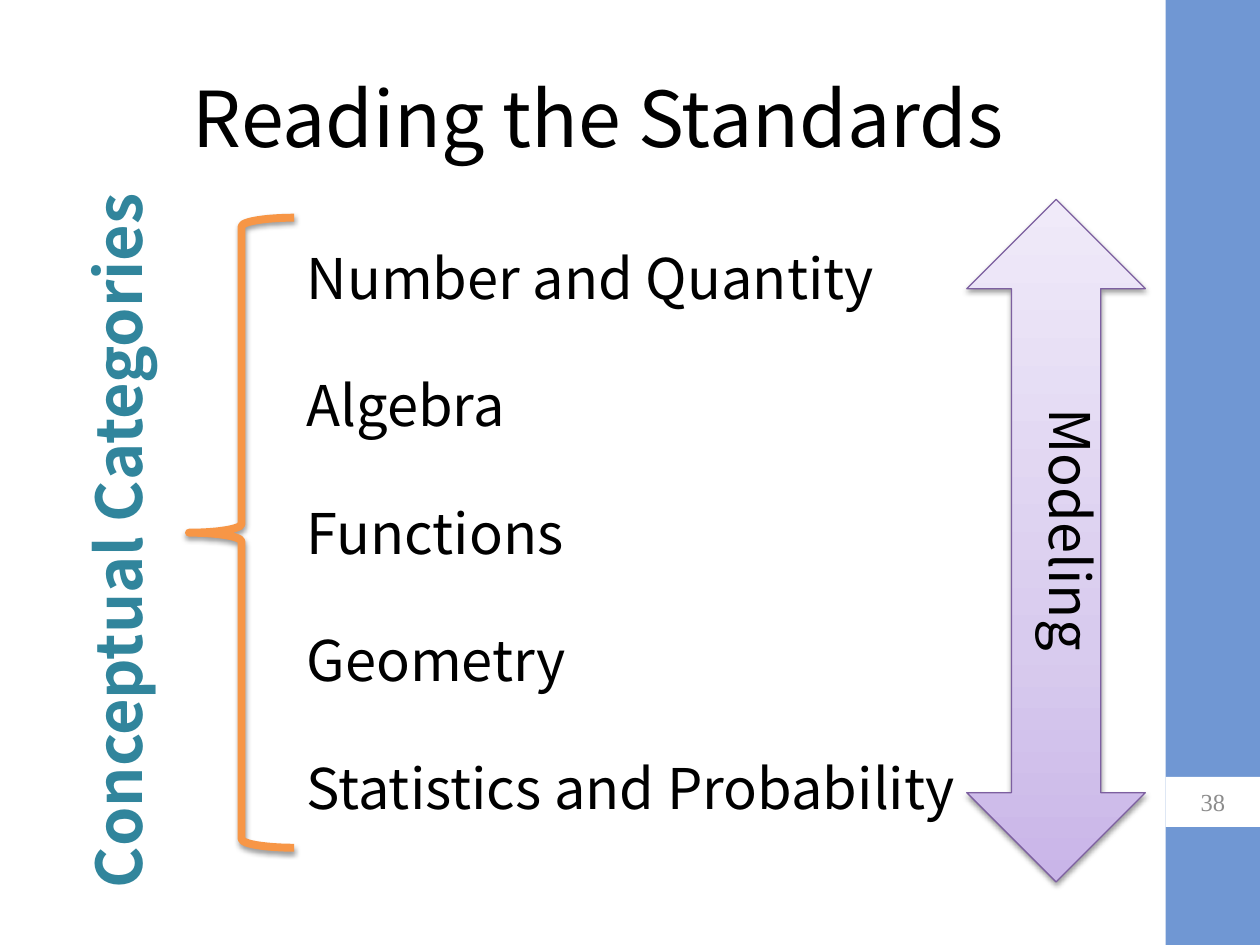
from lxml.etree import SubElement
from pptx import Presentation
from pptx.dml.color import RGBColor
from pptx.enum.shapes import MSO_SHAPE
from pptx.enum.text import MSO_ANCHOR, MSO_AUTO_SIZE, PP_ALIGN
from pptx.oxml.ns import qn
from pptx.util import Cm, Pt

SANS = "Noto Sans CJK TC"
CATEGORIES = ["Number and Quantity", "Algebra", "Functions", "Geometry",
              "Statistics and Probability"]
ARROW_STOPS = [(0, "C9B5E8"), (35, "D8CBEE"), (100, "F0EAF9")]


def color(hex_value):
    return RGBColor.from_string(hex_value)


def apply(target, values):
    for name, value in values.items():
        setattr(target, name, value)


def write(frame, lines, size, hex_value, font=SANS, bold=False, **paragraph_format):
    frame.word_wrap = True
    for index, line in enumerate(lines):
        paragraph = frame.paragraphs[0] if index == 0 else frame.add_paragraph()
        apply(paragraph, paragraph_format)
        run = paragraph.add_run()
        run.text = line
        apply(run.font, {"name": font, "size": Pt(size), "bold": bold})
        run.font.color.rgb = color(hex_value)


def add_text(slide, box, lines, size, hex_value, **text_format):
    frame = slide.shapes.add_textbox(*map(Cm, box)).text_frame
    write(frame, lines, size, hex_value, **text_format)
    return frame


def add_vertical_text(slide, box, line, size, hex_value, direction, bold=False):
    frame = add_text(slide, box, [line], size, hex_value, bold=bold,
                     alignment=PP_ALIGN.CENTER)
    frame.auto_size = MSO_AUTO_SIZE.SHAPE_TO_FIT_TEXT
    frame._txBody.bodyPr.set("vert", direction)


def add_figure(slide, kind, box, fill=None, line=None, line_width=0.75):
    figure = slide.shapes.add_shape(kind, *map(Cm, box))
    figure.shadow.inherit = False
    if fill:
        figure.fill.solid()
        figure.fill.fore_color.rgb = color(fill)
    else:
        figure.fill.background()
    if line:
        figure.line.color.rgb = color(line)
        figure.line.width = Pt(line_width)
    else:
        figure.line.fill.background()
    return figure


def add_color_value(parent, hex_value):
    return SubElement(parent, qn("a:srgbClr"), val=hex_value)


def cast_shadow(figure):
    effects = figure._element.spPr.find(qn("a:effectLst"))
    shadow = SubElement(effects, qn("a:outerShdw"), blurRad=str(Pt(3.1)),
                        dist=str(Pt(1.6)), dir="5400000", rotWithShape="0")
    SubElement(add_color_value(shadow, "000000"), qn("a:alpha"), val="38000")


def fill_gradient(figure, stops, angle):
    figure.fill.gradient()
    figure.fill.gradient_angle = angle
    stop_list = figure._element.spPr.find(qn("a:gradFill")).find(qn("a:gsLst"))
    for old_stop in list(stop_list):
        stop_list.remove(old_stop)
    for position, hex_value in stops:
        stop = SubElement(stop_list, qn("a:gs"), pos=str(position * 1000))
        add_color_value(stop, hex_value)


def main():
    deck = Presentation()
    apply(deck, {"slide_width": Cm(25.4), "slide_height": Cm(19.05)})
    slide = deck.slides.add_slide(deck.slide_layouts[6])

    add_figure(slide, MSO_SHAPE.RECTANGLE, (23.5, 0, 1.9, 19.05), "7097D3")

    title = add_text(slide, (1.27, 0.76, 21.59, 3.18), ["Reading the Standards"],
                     44, "000000", alignment=PP_ALIGN.CENTER)
    title.vertical_anchor = MSO_ANCHOR.MIDDLE

    add_text(slide, (5.93, 4.78, 16.7, 14.27), CATEGORIES, 32, "000000",
             space_after=Pt(34.4))

    page_number = add_figure(slide, MSO_SHAPE.RECTANGLE, (23.5, 15.66, 1.9, 1.01),
                             "FFFFFF").text_frame
    write(page_number, ["38"], 14, "8C8C8C", font="Times New Roman",
          alignment=PP_ALIGN.CENTER)
    page_number.vertical_anchor = MSO_ANCHOR.MIDDLE

    brace = add_figure(slide, MSO_SHAPE.LEFT_BRACE, (3.81, 4.39, 2.12, 12.7),
                       line="F79646", line_width=4.5)
    cast_shadow(brace)
    add_vertical_text(slide, (1.47, 3.38, 2.06, 15.04), "Conceptual Categories",
                      36, "31859C", "vert270", bold=True)

    arrow = add_figure(slide, MSO_SHAPE.UP_DOWN_ARROW, (19.49, 4.02, 3.6, 13.76),
                       line="7D60A0")
    fill_gradient(arrow, ARROW_STOPS, 90)
    cast_shadow(arrow)
    add_vertical_text(slide, (20.54, 5.7, 1.88, 9.95), "Modeling", 32, "000000",
                      "vert")

    deck.save("out.pptx")


if __name__ == "__main__":
    main()
